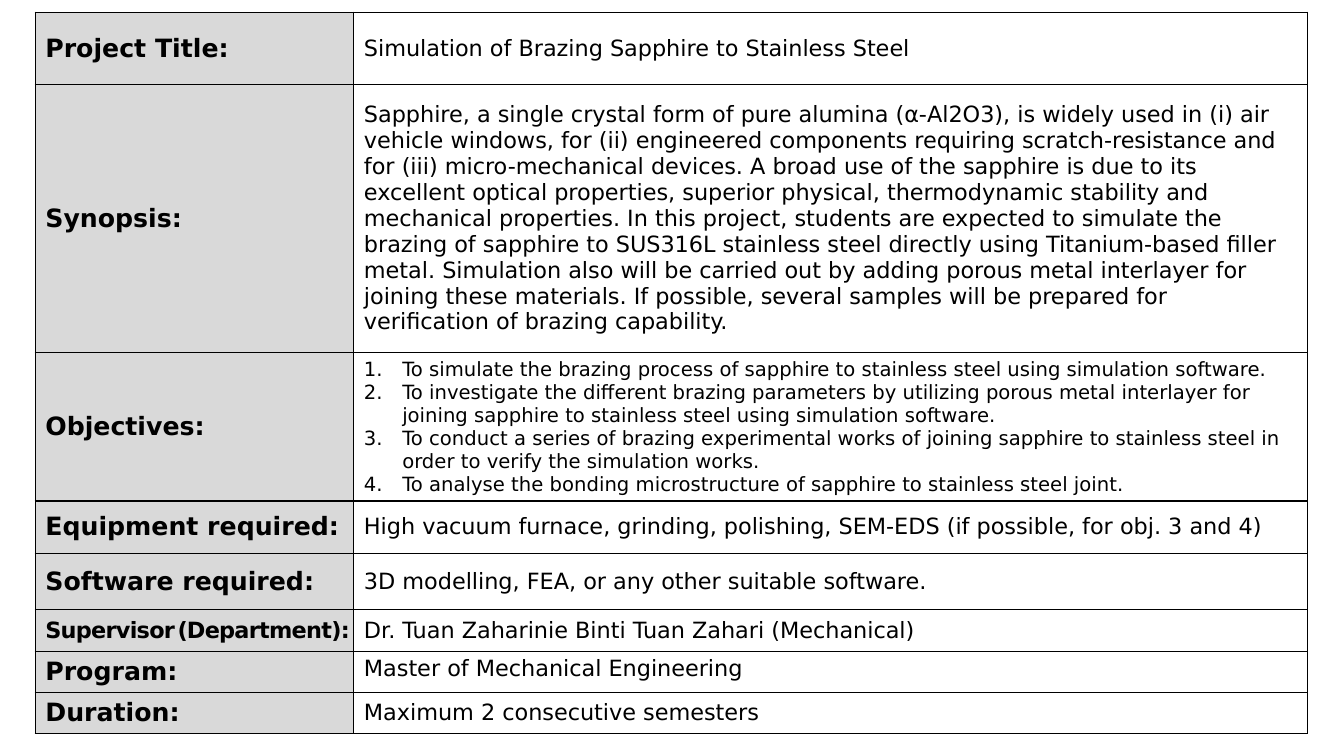
"""Build a one-slide project brief laid out as a two-column table."""
from lxml.etree import SubElement as Sub
from pptx import Presentation
from pptx.dml.color import RGBColor as Rgb
from pptx.enum.text import MSO_ANCHOR as Anchor
from pptx.oxml import parse_xml
from pptx.oxml.ns import nsdecls, qn
from pptx.util import Inches, Pt

FONT = "DejaVu Sans"
HUES = {"ink": "000000", "label": "D9D9D9"}
COLS = (3.16, 9.46)
LEFT, TOP = 0.35, 0.12

SYNOPSIS = (
    "Sapphire, a single crystal form of pure alumina (α-Al2O3), is widely used in "
    "(i) air vehicle windows, for (ii) engineered components requiring "
    "scratch-resistance and for (iii) micro-mechanical devices. A broad use of the "
    "sapphire is due to its excellent optical properties, superior physical, "
    "thermodynamic stability and mechanical properties. In this project, students "
    "are expected to simulate the brazing of sapphire to SUS316L stainless steel "
    "directly using Titanium-based filler metal. Simulation also will be carried "
    "out by adding porous metal interlayer for joining these materials. If "
    "possible, several samples will be prepared for verification of brazing "
    "capability."
)
GOALS = [
    "To simulate the brazing process of sapphire to stainless steel using "
    "simulation software.",
    "To investigate the different brazing parameters by utilizing porous metal "
    "interlayer for joining sapphire to stainless steel using simulation software.",
    "To conduct a series of brazing experimental works of joining sapphire to "
    "stainless steel in order to verify the simulation works.",
    "To analyse the bonding microstructure of sapphire to stainless steel joint.",
]
CHIEF = "Supervisor (Department):"
ROWS = [
    (0.72, "Project Title:", "Simulation of Brazing Sapphire to Stainless Steel"),
    (2.66, "Synopsis:", SYNOPSIS),
    (1.47, "Objectives:", GOALS),
    (0.52, "Equipment required:",
     "High vacuum furnace, grinding, polishing, SEM-EDS (if possible, for obj. 3 and 4)"),
    (0.56, "Software required:", "3D modelling, FEA, or any other suitable software."),
    (0.41, CHIEF, "Dr. Tuan Zaharinie Binti Tuan Zahari (Mechanical)"),
    (0.41, "Program:", "Master of Mechanical Engineering"),
    (0.41, "Duration:", "Maximum 2 consecutive semesters"),
]


def write(para, text, size=16, bold=False, track=None):
    """Add one run of text to a paragraph."""
    run = para.add_run()
    run.text = text
    font = run.font
    font.name, font.size, font.bold = FONT, Pt(size), bold
    font.color.rgb = Rgb.from_string(HUES["ink"])
    if track is not None:
        font._element.set("spc", str(round(track * 100)))


def number(para):
    """Give a paragraph a hanging automatic number."""
    props = para._p.get_or_add_pPr()
    hang = Inches(0.38)
    props.set("marL", str(hang))
    props.set("indent", str(-hang))
    Sub(props, qn("a:buFont"), typeface="+mj-lt")
    Sub(props, qn("a:buAutoNum"), type="arabicPeriod")


def frame(cell):
    """Draw a thin line on all four sides of a cell."""
    props = cell._tc.get_or_add_tcPr()
    for spot, side in enumerate("LRTB"):
        props.insert(spot, parse_xml(
            f'<a:ln{side} {nsdecls("a")} w="{Pt(1)}"><a:solidFill>'
            f'<a:srgbClr val="{HUES["ink"]}"/></a:solidFill></a:ln{side}>'))


def label(cell, text):
    """Fill a left-hand cell; the longest label is set tighter."""
    cell.fill.solid()
    cell.fill.fore_color.rgb = Rgb.from_string(HUES["label"])
    para = cell.text_frame.paragraphs[0]
    if text == CHIEF:
        cell.margin_right = 0
        head, tail = text.split()
        for part, size in ((head, 16), (" ", 5), (tail, 16)):
            write(para, part, size=size, bold=True, track=-0.5)
    else:
        write(para, text, size=18, bold=True)


def value(cell, body):
    """Fill a right-hand cell with a text or a numbered list."""
    cell.fill.background()
    box = cell.text_frame
    if isinstance(body, str):
        write(box.paragraphs[0], body)
        return
    for spot, item in enumerate(body):
        para = box.add_paragraph() if spot else box.paragraphs[0]
        number(para)
        write(para, item, size=14)


def main():
    """Lay out the table and save the deck."""
    deck = Presentation()
    deck.slide_width, deck.slide_height = Inches(13.33), Inches(7.5)
    slide = deck.slides.add_slide(deck.slide_layouts[6])
    tall = sum(row[0] for row in ROWS)
    grid = slide.shapes.add_table(
        len(ROWS), len(COLS), Inches(LEFT), Inches(TOP),
        Inches(sum(COLS)), Inches(tall)).table
    grid.first_row = grid.horz_banding = False
    for col, wide in zip(grid.columns, COLS):
        col.width = Inches(wide)
    for row, (high, name, body) in zip(grid.rows, ROWS):
        row.height = Inches(high)
        left, right = row.cells
        label(left, name)
        value(right, body)
        for cell in (left, right):
            cell.vertical_anchor = Anchor.MIDDLE
            frame(cell)
        if name == "Program:":
            right.vertical_anchor = Anchor.TOP
    deck.save("out.pptx")


if __name__ == "__main__":
    main()
